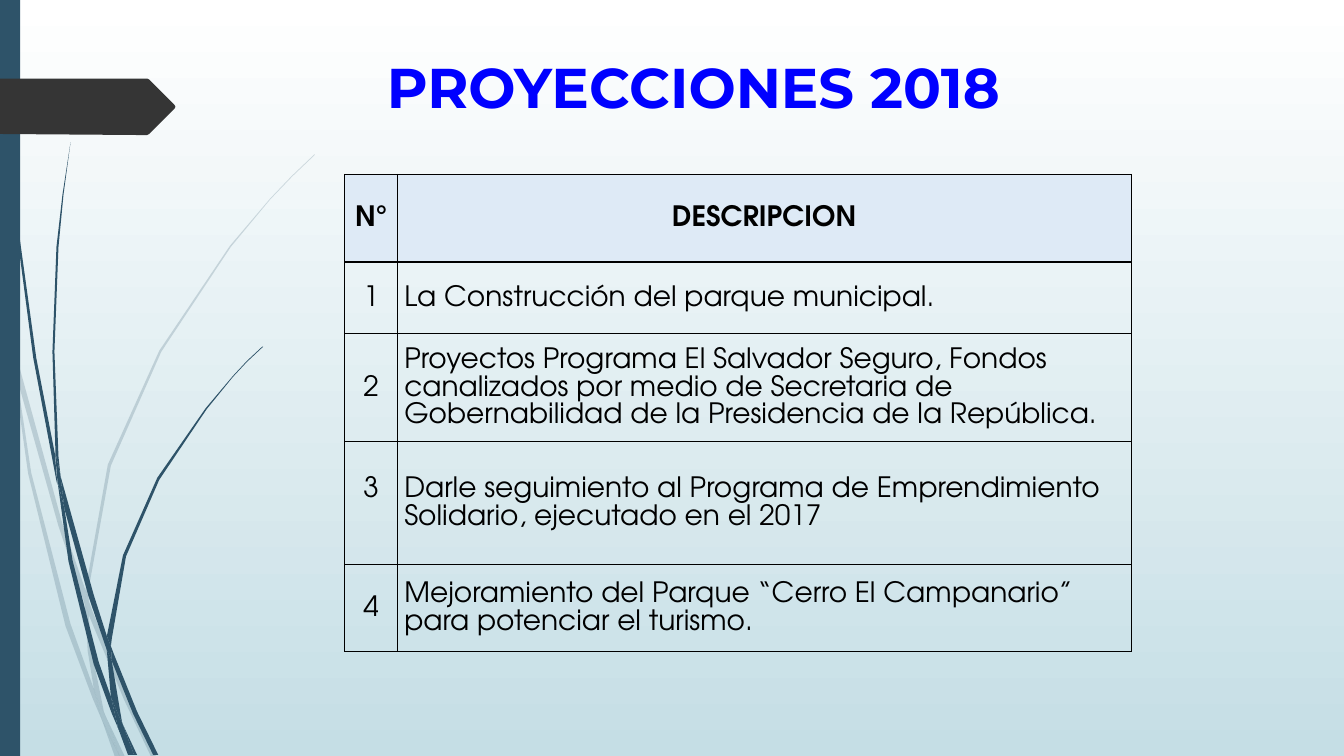
import dataclasses

import lxml.etree
import pptx
import pptx.dml.color
import pptx.enum.shapes
import pptx.enum.text
import pptx.oxml.ns
import pptx.util

Inches = pptx.util.Inches
Pt = pptx.util.Pt
PP_ALIGN = pptx.enum.text.PP_ALIGN
MIDDLE = pptx.enum.text.MSO_ANCHOR.MIDDLE


@dataclasses.dataclass(frozen=True)
class Theme:
    sky_top: str = "FFFFFF"
    sky_bottom: str = "C5DEE5"
    grass: str = "2E5369"
    marker: str = "353535"
    title: str = "0000FF"
    ink: str = "000000"
    header: str = "DEEAF6"
    title_font: str = "Montserrat"
    body_font: str = "TeX Gyre Adventor"
    title_size: int = 40
    body_size: int = 20
    border_width: int = 1
    faded_opacity: int = 20


THEME = Theme()

FADED_GRASS = [
    [(.11, 3.5), (.09, 3.22), (0, 2.82), (0, 2.99), (.1, 3.44)],
    [(.58, 5.22), (.84, 5.99), (.85, 5.86), (.62, 5.2), (.14, 3.45), (.17, 3.76)],
    [(.92, 6.07), (.88, 5.96), (.88, 6.1), (1.23, 6.94), (1.5, 7.51), (1.55, 7.51), (1.27, 6.92)],
    [(1.19, 7.51), (1.24, 7.51), (1.05, 7.11)],
    [(.93, 6.83), (.7, 6.19), (.31, 4.69), (.17, 3.76), (.11, 3.5), (.28, 4.7), (.65, 6.21),
     (.92, 6.93), (1.01, 7.14), (.99, 7.07)],
    [(.84, 5.99), (.87, 6.46), (.93, 6.83), (.96, 6.92), (1.05, 7.11), (1.03, 7.06), (.91, 6.46),
     (.88, 6.1), (.88, 6.08)],
    [(.88, 5.84), (1.1, 4.62), (1.6, 3.49), (2.29, 2.45), (2.68, 1.98), (2.9, 1.75), (3.12, 1.54),
     (3.12, 1.53), (2.89, 1.75), (2.68, 1.97), (2.28, 2.44), (1.58, 3.48), (1.07, 4.61),
     (.85, 5.84), (.85, 5.86), (.88, 5.96)],
    [(1.01, 7.14), (1.14, 7.51), (1.19, 7.51)],
    [(.88, 6.08), (.88, 6.1), (.88, 5.96), (.85, 5.86), (.84, 5.99)],
    [(.96, 6.92), (.93, 6.83), (.99, 7.07), (1.01, 7.14), (1.19, 7.51), (1.05, 7.11)],
]

DARK_GRASS = [
    [(.07, 1.1), (.17, 2.33), (.33, 3.55), (.56, 4.77), (.57, 4.81), (.55, 4.57), (.55, 4.53),
     (.36, 3.55), (.19, 2.32), (.08, 1.09), (.05, .48), (.04, 0), (.03, 0), (.04, .48)],
    [(.88, 5.92), (1.06, 6.45), (1.06, 6.33), (1.06, 6.31), (.93, 5.9), (.6, 4.72), (.64, 5.05)],
    [(1.13, 6.49), (1.1, 6.41), (1.11, 6.56), (1.32, 7.08), (1.52, 7.49), (1.57, 7.49), (1.36, 7.06)],
    [(1.1, 6.91), (.98, 6.57), (.72, 5.56), (.64, 5.05), (.57, 4.77), (.68, 5.57), (.93, 6.59),
     (1.11, 7.08), (1.17, 7.22), (1.16, 7.17)],
    [(.6, 4.72), (.58, 4.53), (.54, 3.49), (.58, 2.45), (.63, 1.93), (.7, 1.41), (.62, 1.93),
     (.56, 2.45), (.52, 3.49), (.55, 4.49)],
    [(1.33, 7.49), (1.36, 7.49), (1.22, 7.19)],
    [(.57, 4.77), (.64, 5.05), (.6, 4.72), (.55, 4.49), (.55, 4.53)],
    [(1.11, 6.33), (1.25, 5.52), (1.58, 4.76), (2.05, 4.06), (2.31, 3.74), (2.45, 3.59),
     (2.61, 3.44), (2.6, 3.44), (2.45, 3.58), (2.31, 3.73), (2.04, 4.05), (1.56, 4.74),
     (1.22, 5.51), (1.06, 6.31), (1.1, 6.41)],
    [(1.17, 7.22), (1.27, 7.49), (1.31, 7.49)],
    [(1.06, 6.45), (1.1, 6.91), (1.16, 7.06), (1.22, 7.19), (1.21, 7.16), (1.11, 6.56), (1.09, 6.51)],
    [(1.06, 6.45), (1.09, 6.51), (1.11, 6.56), (1.1, 6.41), (1.06, 6.31), (1.06, 6.33)],
    [(1.16, 7.06), (1.1, 6.91), (1.16, 7.17), (1.17, 7.22), (1.3, 7.49), (1.33, 7.49), (1.22, 7.19)],
]

MARKER = [(1.73, 1.08), (1.48, 1.33), (1.46, 1.34), (1.36, 1.34), (0, 1.33), (0, .78),
          (1.46, .78), (1.48, .79), (1.73, 1.04), (1.74, 1.06)]

COLUMN_WIDTHS = [.52, 7.28]
ROW_HEIGHTS = [.87, .71, .87, 1.22, .86]
RAISED_NUMBER = "3"
PROJECTIONS = [
    ("N°", "DESCRIPCION"),
    ("1", "La Construcción del parque municipal."),
    ("2", "Proyectos Programa El Salvador Seguro, Fondos canalizados por medio de "
          "Secretaria de Gobernabilidad de la Presidencia de la República."),
    ("3", "Darle seguimiento al Programa de Emprendimiento Solidario, ejecutado en el 2017"),
    ("4", "Mejoramiento del Parque “Cerro El Campanario” para potenciar el turismo."),
]


def rgb(value):
    return pptx.dml.color.RGBColor.from_string(value)


def write_text(frame, text, *, font, size, color, bold=False, align=PP_ALIGN.LEFT, spacing=1.0):
    frame.word_wrap = True
    paragraph = frame.paragraphs[0]
    paragraph.alignment = align
    paragraph.line_spacing = spacing
    run = paragraph.add_run()
    run.text = text
    run.font.name = font
    run.font.size = Pt(size)
    run.font.bold = bold
    run.font.color.rgb = rgb(color)


def paint(shape, color, opacity=100):
    shape.shadow.inherit = False
    shape.fill.solid()
    shape.fill.fore_color.rgb = rgb(color)
    shape.line.fill.background()
    if opacity < 100:
        tint = shape._element.spPr.find(".//" + pptx.oxml.ns.qn("a:srgbClr"))
        lxml.etree.SubElement(tint, pptx.oxml.ns.qn("a:alpha"), val=str(opacity * 1000))


def add_outline(slide, points, color, opacity=100):
    corners = [(Inches(x), Inches(y)) for x, y in points]
    builder = slide.shapes.build_freeform(*corners[0])
    builder.add_line_segments(corners[1:], close=True)
    paint(builder.convert_to_shape(), color, opacity)


def add_backdrop(slide, height):
    sky = slide.background.fill
    sky.gradient()
    sky.gradient_angle = 270
    for stop, color in zip(sky.gradient_stops, (THEME.sky_top, THEME.sky_bottom)):
        stop.color.rgb = rgb(color)
    for blade in FADED_GRASS:
        add_outline(slide, blade, THEME.grass, THEME.faded_opacity)
    for blade in DARK_GRASS:
        add_outline(slide, blade, THEME.grass)
    side_band = slide.shapes.add_shape(
        pptx.enum.shapes.MSO_SHAPE.RECTANGLE, 0, 0, Inches(.2), height)
    paint(side_band, THEME.grass)
    add_outline(slide, MARKER, THEME.marker)


def add_title(slide, text):
    title = slide.shapes.add_textbox(Inches(3.74), Inches(.47), Inches(7.6), Inches(.77))
    write_text(title.text_frame, text, font=THEME.title_font, size=THEME.title_size,
               color=THEME.title, bold=True)


def add_borders(cell):
    properties = cell._tc.get_or_add_tcPr()
    for side in ("a:lnL", "a:lnR", "a:lnT", "a:lnB"):
        border = lxml.etree.SubElement(
            properties, pptx.oxml.ns.qn(side), w=str(Pt(THEME.border_width)))
        fill = lxml.etree.SubElement(border, pptx.oxml.ns.qn("a:solidFill"))
        lxml.etree.SubElement(fill, pptx.oxml.ns.qn("a:srgbClr"), val=THEME.ink)


def fill_cell(cell, text, is_header, centred):
    add_borders(cell)
    if is_header:
        cell.fill.solid()
        cell.fill.fore_color.rgb = rgb(THEME.header)
    else:
        cell.fill.background()
    cell.vertical_anchor = MIDDLE
    cell.margin_left = cell.margin_right = Inches(.07)
    cell.margin_top = 0
    cell.margin_bottom = Inches(.28 if text == RAISED_NUMBER else 0)
    write_text(cell.text_frame, text, font=THEME.body_font, size=THEME.body_size,
               color=THEME.ink, bold=is_header, spacing=1.07,
               align=PP_ALIGN.CENTER if centred else PP_ALIGN.LEFT)


def add_projections(slide):
    projections = slide.shapes.add_table(
        len(ROW_HEIGHTS), len(COLUMN_WIDTHS), Inches(3.42), Inches(1.73),
        Inches(sum(COLUMN_WIDTHS)), Inches(sum(ROW_HEIGHTS))).table
    projections.first_row = projections.horz_banding = False
    for column, width in zip(projections.columns, COLUMN_WIDTHS):
        column.width = Inches(width)
    for row_index, (height, entries) in enumerate(zip(ROW_HEIGHTS, PROJECTIONS)):
        projections.rows[row_index].height = Inches(height)
        for column_index, text in enumerate(entries):
            is_header = row_index == 0
            fill_cell(projections.cell(row_index, column_index), text, is_header,
                      centred=is_header or column_index == 0)


def main():
    deck = pptx.Presentation()
    deck.slide_width = Inches(13.33)
    deck.slide_height = Inches(7.5)
    slide = deck.slides.add_slide(deck.slide_layouts[6])
    add_backdrop(slide, deck.slide_height)
    add_title(slide, "PROYECCIONES 2018")
    add_projections(slide)
    deck.save("out.pptx")


if __name__ == "__main__":
    main()
